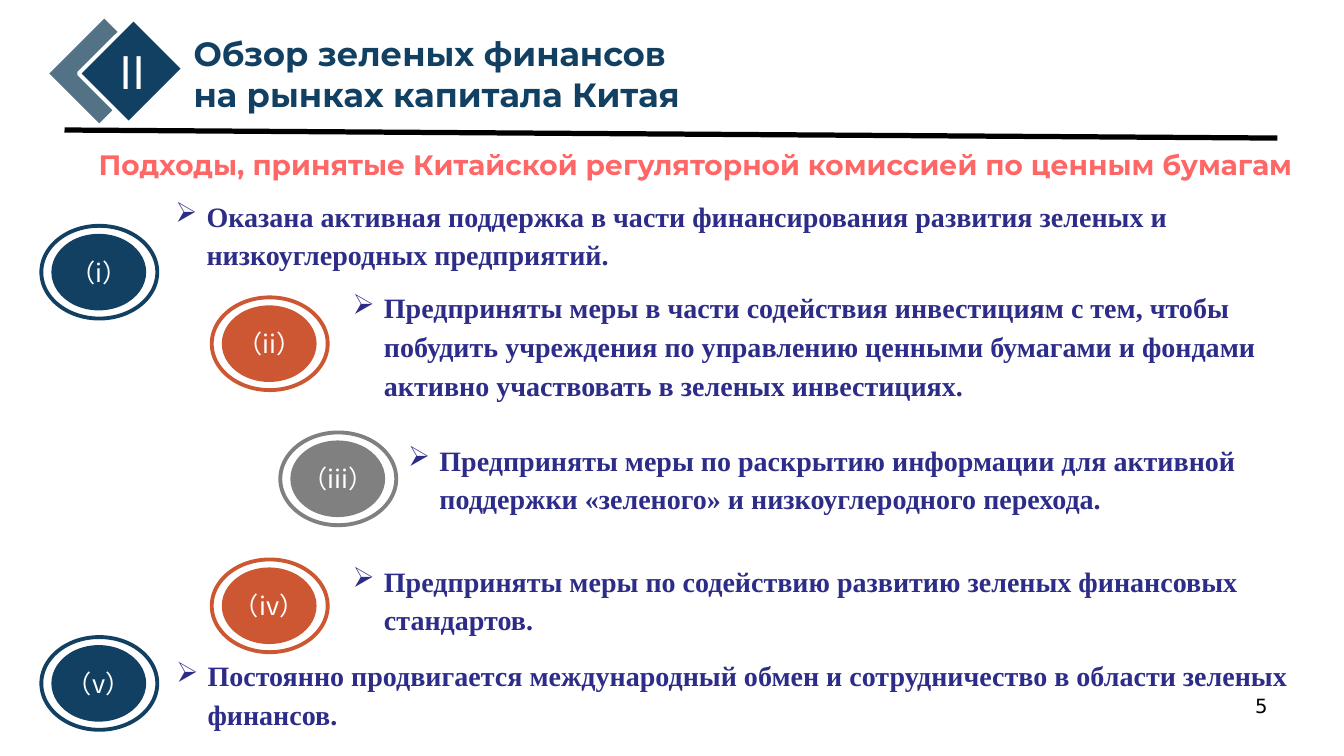
"""Build the slide on the regulator's approaches to green finance in China."""
import dataclasses

import lxml.etree
import pptx
import pptx.dml.color
import pptx.enum.shapes
import pptx.enum.text
import pptx.oxml.ns
import pptx.util

Inches = pptx.util.Inches
Align = pptx.enum.text.PP_ALIGN
Anchor = pptx.enum.text.MSO_ANCHOR
Shape = pptx.enum.shapes.MSO_SHAPE
qn = pptx.oxml.ns.qn


@dataclasses.dataclass(frozen=True)
class Theme:
    navy: str = "124062"
    slate: str = "537285"
    orange: str = "CC5732"
    gray: str = "808080"
    coral: str = "FF6666"
    indigo: str = "2D2D89"
    white: str = "FFFFFF"
    black: str = "000000"
    heading_font: str = "Montserrat"
    body_font: str = "Times New Roman"
    badge_font: str = "Noto Sans CJK SC"
    number_font: str = "DejaVu Sans"
    numeral_size: int = 32
    title_size: int = 24
    body_size: int = 20
    badge_size: int = 18
    number_size: int = 14


theme = Theme()


def write(shape, text, *, font, size, color, bold=False, align=Align.LEFT,
          anchor=Anchor.TOP, wrap=True, spacing=1.0, bullet=None):
    """Fill a shape with text, one paragraph per line."""
    frame = shape.text_frame
    frame.text = text
    frame.word_wrap = wrap
    frame.auto_size = pptx.enum.text.MSO_AUTO_SIZE.NONE
    frame.vertical_anchor = anchor
    for paragraph in frame.paragraphs:
        if bullet:
            properties = paragraph._p.get_or_add_pPr()
            properties.set("marL", str(Inches(0.31)))
            properties.set("indent", str(-Inches(0.31)))
            lxml.etree.SubElement(properties, qn("a:buChar")).set("char", bullet)
        paragraph.alignment = align
        paragraph.line_spacing = spacing
        for run in paragraph.runs:
            run.font.size = pptx.util.Pt(size)
            run.font.bold = bold
            run.font.name = font
            run.font.color.rgb = pptx.dml.color.RGBColor.from_string(color)
            east_asian = lxml.etree.SubElement(run._r.get_or_add_rPr(), qn("a:ea"))
            east_asian.set("typeface", font)


def draw(kind, left, top, width, height, fill=None, line=None, weight=2.75):
    """Add a preset shape with a plain fill and outline."""
    shape = slide.shapes.add_shape(
        kind, Inches(left), Inches(top), Inches(width), Inches(height))
    shape.shadow.inherit = False
    for form, color in ((shape.fill, fill), (shape.line.fill, line)):
        if color:
            form.solid()
            form.fore_color.rgb = pptx.dml.color.RGBColor.from_string(color)
        else:
            form.background()
    if line:
        shape.line.width = pptx.util.Pt(weight)
    return shape


presentation = pptx.Presentation()
presentation.slide_width = Inches(13.33)
presentation.slide_height = Inches(7.5)
slide = presentation.slides.add_slide(presentation.slide_layouts[5])

for left, fill, line in ((0.66, theme.slate, None), (0.95, theme.navy, theme.white)):
    diamond = draw(Shape.ROUNDED_RECTANGLE, left, 0.32, 0.7, 0.77, fill, line)
    diamond.adjustments[0] = 0
    diamond.rotation = 45

numeral = slide.shapes.add_textbox(Inches(1.09), Inches(0.39), Inches(0.46), Inches(0.64))
write(numeral, "II", font=theme.badge_font, size=theme.numeral_size,
      color=theme.white, wrap=False)

title = slide.shapes.title
title.left, title.top = Inches(1.82), Inches(0.28)
title.width, title.height = Inches(5.84), Inches(0.91)
write(title, "Обзор зеленых финансов\nна рынках капитала Китая",
      font=theme.heading_font, size=theme.title_size, color=theme.navy, bold=True)

rule = slide.shapes.add_connector(
    pptx.enum.shapes.MSO_CONNECTOR.STRAIGHT,
    Inches(0.64), Inches(1.29), Inches(12.67), Inches(1.37))
rule.line.width = pptx.util.Pt(3.75)
rule.line.color.rgb = pptx.dml.color.RGBColor.from_string(theme.black)
lxml.etree.SubElement(rule._element.spPr, qn("a:effectLst"))

subtitle = slide.shapes.add_textbox(Inches(0.88), Inches(1.41), Inches(12.45), Inches(0.77))
write(subtitle, "Подходы, принятые Китайской регуляторной комиссией по ценным бумагам",
      font=theme.heading_font, size=theme.body_size, color=theme.coral, bold=True)

approaches = [
    ("（i）", theme.navy, 0.39, 2.22, 1.64, 2.06, 11.51,
     "Оказана активная поддержка в части финансирования развития зеленых и "
     "низкоуглеродных предприятий."),
    ("（ii）", theme.orange, 2.08, 2.93, 3.4, 3.16, 9.76,
     "Предприняты меры в части содействия инвестициям с тем, чтобы побудить "
     "учреждения по управлению ценными бумагами и фондами активно участвовать "
     "в зеленых инвестициях."),
    ("（iii）", theme.gray, 2.76, 4.27, 3.95, 4.48, 8.95,
     "Предприняты меры по раскрытию информации для активной поддержки "
     "«зеленого» и низкоуглеродного перехода."),
    ("（iv）", theme.orange, 2.08, 5.53, 3.4, 5.68, 9.49,
     "Предприняты меры по содействию развитию зеленых финансовых стандартов."),
    ("（v）", theme.navy, 0.39, 6.3, 1.65, 6.62, 11.25,
     "Постоянно продвигается международный обмен и сотрудничество в области "
     "зеленых финансов."),
]
for label, color, badge_left, badge_top, left, top, width, text in approaches:
    draw(Shape.OVAL, badge_left + 0.02, badge_top + 0.02, 1.15, 0.92, line=color)
    badge = draw(Shape.OVAL, badge_left + 0.12, badge_top + 0.1, 0.94, 0.76, fill=color)
    write(badge, label, font=theme.badge_font, size=theme.badge_size,
          color=theme.white, align=Align.CENTER, anchor=Anchor.MIDDLE, wrap=False)
    approach = slide.shapes.add_textbox(
        Inches(left), Inches(top), Inches(width), Inches(0.5))
    write(approach, text, font=theme.body_font, size=theme.body_size,
          color=theme.indigo, bold=True, anchor=Anchor.MIDDLE,
          spacing=1.15, bullet="➢")

page_number = slide.shapes.add_textbox(Inches(9.56), Inches(6.83), Inches(3.11), Inches(0.52))
write(page_number, "5", font=theme.number_font, size=theme.number_size,
      color=theme.black, align=Align.RIGHT)

presentation.save("out.pptx")
